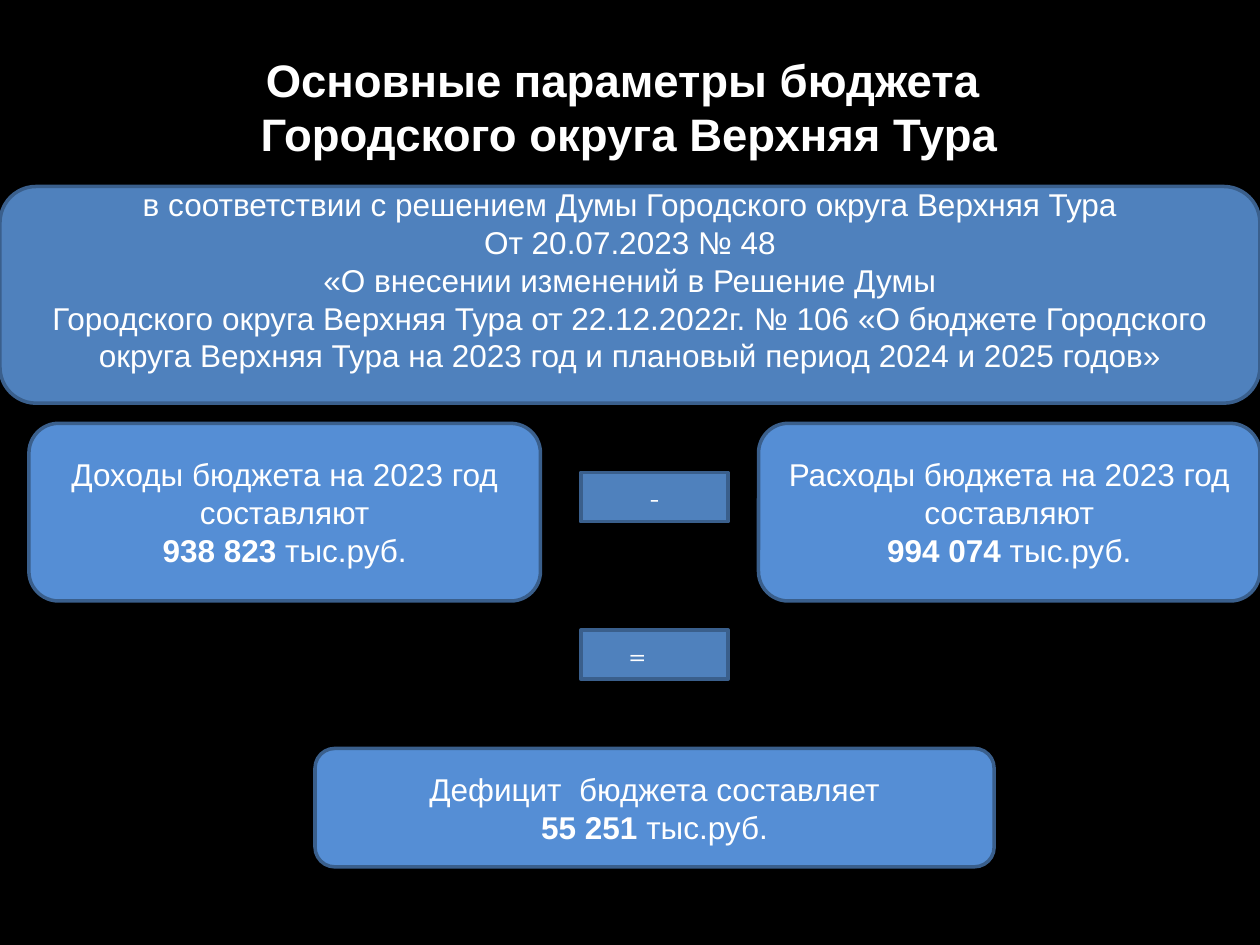
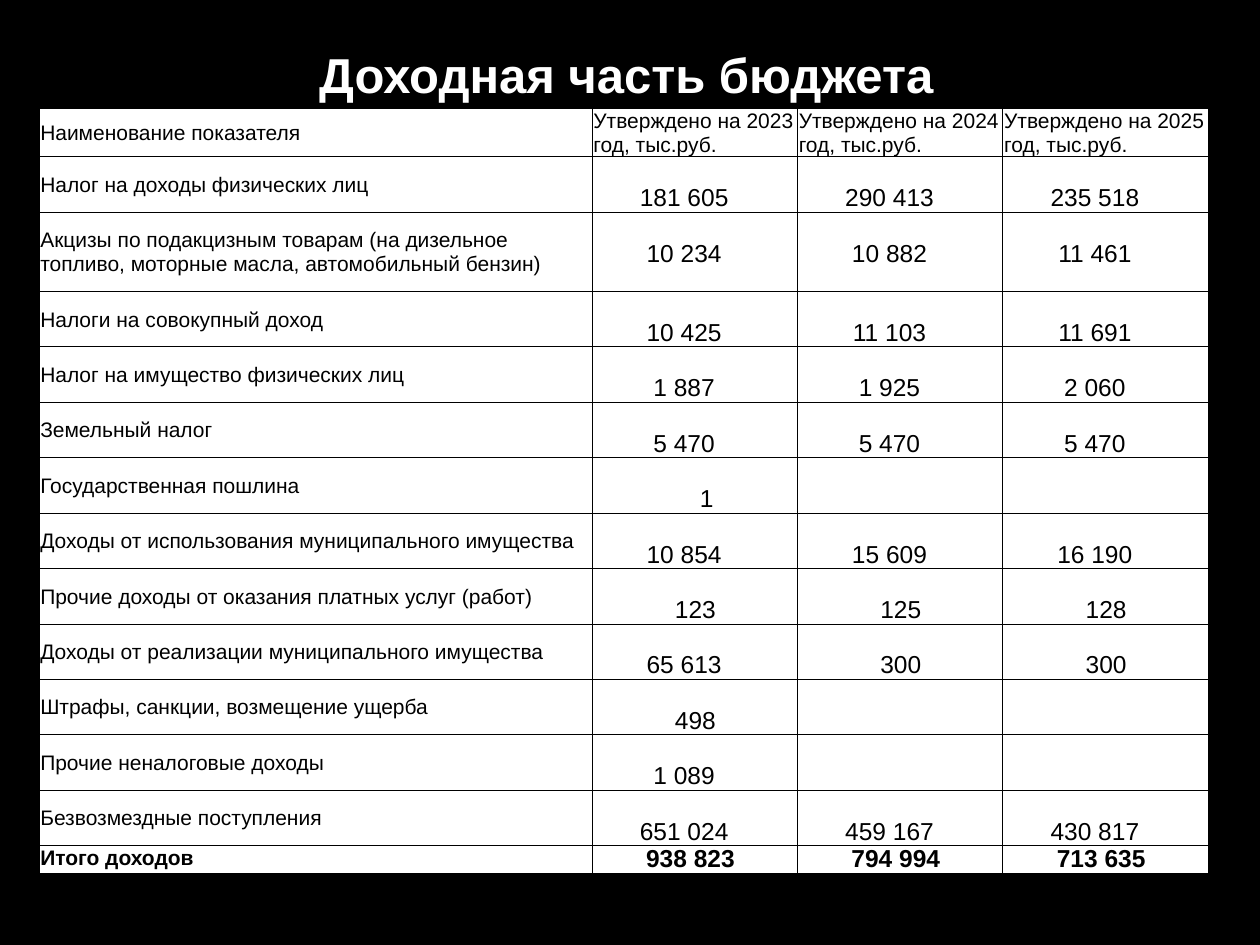
import pptx
import pptx.dml.color
import pptx.enum.shapes
import pptx.enum.text
import pptx.oxml.ns
import pptx.util
from lxml import etree

Inches = pptx.util.Inches
Pt = pptx.util.Pt
ALIGN = pptx.enum.text.PP_ALIGN
ANCHOR = pptx.enum.text.MSO_ANCHOR
SHAPES = pptx.enum.shapes.MSO_SHAPE

BLACK, WHITE = "000000", "FFFFFF"
BLUE, LIGHT_BLUE, OUTLINE = "4F81BD", "558ED5", "3A5F8C"
FONT = "Arial"

DECISION_LINES = [
    "в соответствии с решением Думы Городского округа Верхняя Тура",
    "От 20.07.2023 № 48",
    "«О внесении изменений в Решение Думы",
    "Городского округа Верхняя Тура от 22.12.2022г. № 106 «О бюджете Городского "
    "округа Верхняя Тура на 2023 год и плановый период 2024 и 2025 годов»",
]
AMOUNT_BOXES = [
    ((0.23, 3.36, 4.06, 1.41), "Доходы бюджета на 2023 год составляют", "938 823"),
    ((6.02, 3.36, 3.98, 1.41), "Расходы бюджета на 2023 год составляют", "994 074"),
    ((2.5, 5.94, 5.39, 0.94), "Дефицит  бюджета составляет", "55 251"),
]
YEARS = [2023, 2024, 2025]
INCOME_ROWS = [
    ("Налог на доходы физических лиц", "181 605", "290 413", "235 518"),
    ("Акцизы по подакцизным товарам (на дизельное топливо, моторные масла, "
     "автомобильный бензин)", "10 234", "10 882", "11 461"),
    ("Налоги на совокупный доход", "10 425", "11 103", "11 691"),
    ("Налог на имущество физических лиц", "1 887", "1 925", "2 060"),
    ("Земельный налог", "5 470", "5 470", "5 470"),
    ("Государственная пошлина", "1", "", ""),
    ("Доходы от использования муниципального имущества", "10 854", "15 609", "16 190"),
    ("Прочие доходы от оказания платных услуг (работ)", "123", "125", "128"),
    ("Доходы от реализации муниципального имущества", "65 613", "300", "300"),
    ("Штрафы, санкции, возмещение ущерба", "498", "", ""),
    ("Прочие неналоговые доходы", "1 089", "", ""),
    ("Безвозмездные поступления", "651 024", "459 167", "430 817"),
]
TOTAL_ROW = ("Итого доходов", "938 823", "794 994", "713 635")


def color(value):
    """Turn a hex string into a colour."""
    return pptx.dml.color.RGBColor.from_string(value)


def paint(target, value):
    """Give a shape, cell or background a solid fill."""
    target.fill.solid()
    target.fill.fore_color.rgb = color(value)


def add_run(paragraph, text, size, bold=False, font=FONT, ink=WHITE):
    """Append one formatted run to a paragraph."""
    run = paragraph.add_run()
    run.text = text
    run.font.size, run.font.bold, run.font.name = Pt(size), bold, font
    run.font.color.rgb = color(ink)


def add_titled_slide(presentation, box, lines, size):
    """Add a black slide whose bold title fills the given box."""
    slide = presentation.slides.add_slide(presentation.slide_layouts[5])
    paint(slide.background, BLACK)
    title = slide.shapes.title
    title.left, title.top, title.width, title.height = map(Inches, box)
    title.text_frame.vertical_anchor = ANCHOR.MIDDLE
    paragraph = title.text_frame.paragraphs[0]
    paragraph.alignment = ALIGN.CENTER
    for index, line in enumerate(lines):
        if index:
            paragraph.add_line_break()
        add_run(paragraph, line, size, bold=True)
    return slide


def add_box(slide, kind, box, fill, paragraphs, font=FONT):
    """Add an outlined box; each paragraph is a list of (text, bold) runs."""
    shape = slide.shapes.add_shape(kind, *map(Inches, box))
    shape.shadow.inherit = False
    paint(shape, fill)
    shape.line.color.rgb = color(OUTLINE)
    shape.line.width = Pt(2)
    frame = shape.text_frame
    frame.word_wrap = True
    frame.vertical_anchor = ANCHOR.MIDDLE
    for index, runs in enumerate(paragraphs):
        paragraph = frame.add_paragraph() if index else frame.paragraphs[0]
        paragraph.alignment = ALIGN.CENTER
        for text, bold in runs:
            add_run(paragraph, text, 18, bold, font)
    return shape


def add_decision_band(slide, box):
    """Add the full-width band that cites the council decision."""
    paragraphs = [[(line, False)] for line in DECISION_LINES]
    band = add_box(slide, SHAPES.ROUNDED_RECTANGLE, box, BLUE, paragraphs)
    band.text_frame.margin_top = 0
    band.text_frame.margin_bottom = Inches(0.24)


def add_amount_box(slide, box, caption, amount):
    """Add a rounded box with a caption and a bold amount."""
    paragraphs = [[(caption, False)], [(amount, True), (" тыс.руб.", False)]]
    add_box(slide, SHAPES.ROUNDED_RECTANGLE, box, LIGHT_BLUE, paragraphs)


def add_sign(slide, box, sign, right_margin=0.1):
    """Add a small box with an arithmetic sign."""
    shape = add_box(slide, SHAPES.RECTANGLE, box, BLUE, [[(sign, False)]], "Cambria")
    shape.text_frame.margin_right = Inches(right_margin)


def add_borders(cell):
    """Draw thin black lines around a cell."""
    properties = cell._tc.get_or_add_tcPr()
    for index, side in enumerate(("lnL", "lnR", "lnT", "lnB")):
        line = etree.Element(pptx.oxml.ns.qn("a:" + side), w=str(Pt(0.5)))
        fill = etree.SubElement(line, pptx.oxml.ns.qn("a:solidFill"))
        etree.SubElement(fill, pptx.oxml.ns.qn("a:srgbClr"), val=BLACK)
        properties.insert(index, line)


def fill_cell(cell, text, is_amount, is_total):
    """Fill one cell as a label or as an amount."""
    paint(cell, WHITE)
    add_borders(cell)
    if not text:
        return
    cell.margin_left = cell.margin_right = cell.margin_top = Inches(0.01)
    cell.margin_bottom = 0
    cell.vertical_anchor = ANCHOR.TOP if is_amount or is_total else ANCHOR.MIDDLE
    paragraph = cell.text_frame.paragraphs[0]
    paragraph.alignment = ALIGN.CENTER if is_amount else ALIGN.LEFT
    if is_amount:
        cell.margin_right = Inches(0.07 if is_total else 0.17)
        cell.margin_left = Inches(0.09 * max(0, 5 - len(text)))
        cell.margin_top = Inches(0 if is_total else 0.22)
    add_run(paragraph, text, 14 if is_amount else 12, is_total, ink=BLACK)


def add_income_table(slide, left, top):
    """Add the table of income by source and year."""
    header = ["Наименование показателя"]
    header += [f"Утверждено на {year} год, тыс.руб." for year in YEARS]
    rows = [header, *INCOME_ROWS, TOTAL_ROW]
    widths = [4.39] + [1.63] * len(YEARS)
    heights = [0.38, 0.44, 0.63] + [0.44] * (len(INCOME_ROWS) - 2) + [0.22]
    table = slide.shapes.add_table(
        len(rows), len(widths), Inches(left), Inches(top),
        Inches(sum(widths)), Inches(sum(heights))).table
    table.first_row = table.horz_banding = False
    for column, width in zip(table.columns, widths):
        column.width = Inches(width)
    for row_index, (texts, height) in enumerate(zip(rows, heights)):
        table.rows[row_index].height = Inches(height)
        for column_index, text in enumerate(texts):
            fill_cell(table.cell(row_index, column_index), text,
                      row_index > 0 and column_index > 0, texts is TOTAL_ROW)


def add_parameters_slide(presentation):
    """Build the slide that shows income minus spending equals deficit."""
    lines = ["Основные параметры бюджета ", "Городского округа Верхняя Тура"]
    slide = add_titled_slide(presentation, (0.23, 0.29, 9.53, 1.11), lines, 26)
    for box, caption, amount in AMOUNT_BOXES:
        add_amount_box(slide, box, caption, amount)
    add_sign(slide, (4.61, 3.75, 1.17, 0.39), "-")
    add_sign(slide, (4.61, 5, 1.17, 0.39), "=", 0.37)
    add_decision_band(slide, (0, 1.48, 10, 1.72))


def add_income_slide(presentation):
    """Build the slide with the income table."""
    slide = add_titled_slide(
        presentation, (0.47, 0.23, 9, 0.72), ["Доходная часть бюджета"], 28)
    add_income_table(slide, 0.31, 0.86)


def main():
    """Build and save the presentation."""
    presentation = pptx.Presentation()
    presentation.slide_width, presentation.slide_height = Inches(10), Inches(7.5)
    add_parameters_slide(presentation)
    add_income_slide(presentation)
    presentation.save("out.pptx")


if __name__ == "__main__":
    main()
